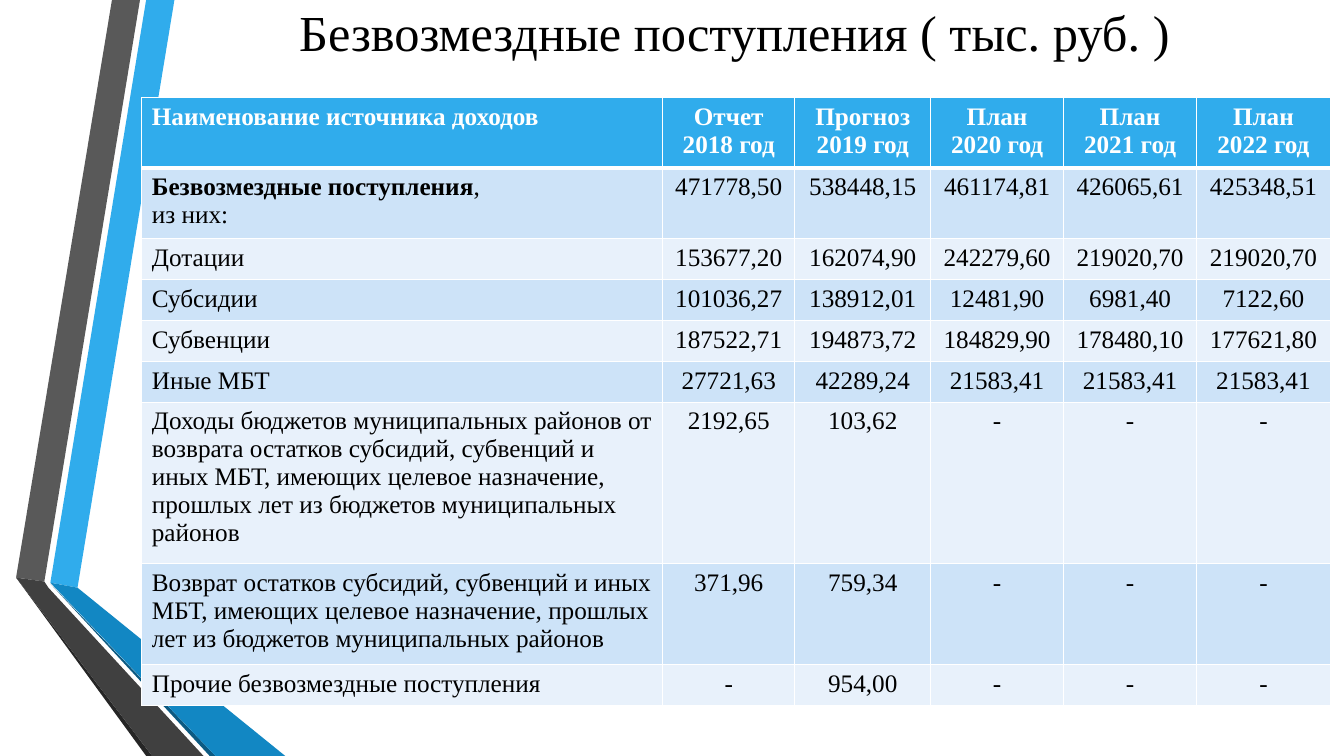
from lxml.etree import SubElement
from pptx import Presentation
from pptx.dml.color import RGBColor
from pptx.enum.text import MSO_ANCHOR as Anchor, PP_ALIGN as Align
from pptx.oxml.ns import qn
from pptx.util import Pt

FONT = "Times New Roman"
BLACK = RGBColor(0x00, 0x00, 0x00)
WHITE = RGBColor(0xFF, 0xFF, 0xFF)
BLUE = RGBColor(0x30, 0xAC, 0xEC)
MID_BLUE = RGBColor(0x12, 0x87, 0xC3)
DEEP_BLUE = RGBColor(0x0C, 0x5A, 0x82)
GREY = RGBColor(0x59, 0x59, 0x59)
DARK_GREY = RGBColor(0x40, 0x40, 0x40)
DEEP_GREY = RGBColor(0x26, 0x26, 0x26)
ROW_ODD = RGBColor(0xCD, 0xE3, 0xF8)
ROW_EVEN = RGBColor(0xE8, 0xF1, 0xFB)

# Ribbon facets on the left, from back to front
RIBBON = [
    (BLUE, [(36, 416.2), (55.4, 419.8), (124.6, 0), (104.4, 0)]),
    (GREY, [(100, 0), (80, 0), (11.5, 412.6), (31.7, 415.4)]),
    (DEEP_GREY, [(11.5, 412.6), (104.4, 540), (108.7, 540)]),
    (DEEP_BLUE, [(36, 416.9), (149.8, 540), (154, 540)]),
    (MID_BLUE, [(36, 416.2), (154, 540), (203.8, 540), (55.4, 419.8)]),
    (DARK_GREY, [(145.4, 540), (34.6, 419.8), (31.7, 415.4), (11.5, 412.6),
                 (108.7, 540)]),
]

COLUMN_WIDTHS = [372, 94.5, 97, 95, 95, 95.5]
ROW_HEIGHT = 29.2
HEADER = ["Наименование источника доходов", "Отчет 2018 год", "Прогноз 2019 год",
          "План 2020 год", "План 2021 год", "План 2022 год"]
TOTAL = "Безвозмездные поступления"
INCOME = [
    [TOTAL, "471778,50", "538448,15", "461174,81", "426065,61", "425348,51"],
    ["Дотации", "153677,20", "162074,90", "242279,60", "219020,70", "219020,70"],
    ["Субсидии", "101036,27", "138912,01", "12481,90", "6981,40", "7122,60"],
    ["Субвенции", "187522,71", "194873,72", "184829,90", "178480,10", "177621,80"],
    ["Иные МБТ", "27721,63", "42289,24", "21583,41", "21583,41", "21583,41"],
    ["Доходы бюджетов муниципальных районов от возврата остатков субсидий, "
     "субвенций и иных МБТ, имеющих целевое назначение, прошлых лет из бюджетов "
     "муниципальных районов", "2192,65", "103,62", "-", "-", "-"],
    ["Возврат остатков субсидий, субвенций и иных МБТ, имеющих целевое назначение, "
     "прошлых лет из бюджетов муниципальных районов",
     "371,96", "759,34", "-", "-", "-"],
    ["Прочие безвозмездные поступления", "-", "954,00", "-", "-", "-"],
]


def write(paragraph, text, size=18, color=BLACK, bold=False, align=Align.LEFT):
    paragraph.alignment = align
    run = paragraph.add_run()
    run.text = text
    run.font.name = FONT
    run.font.size = Pt(size)
    run.font.bold = bold
    run.font.color.rgb = color


def add_facet(slide, color, corners):
    start, *others = [(Pt(x), Pt(y)) for x, y in corners]
    outline = slide.shapes.build_freeform(*start)
    outline.add_line_segments(others, close=True)
    facet = outline.convert_to_shape()
    facet.shadow.inherit = False
    facet.fill.solid()
    facet.fill.fore_color.rgb = color
    facet.line.fill.background()


def add_title(slide, text):
    title = slide.shapes.add_textbox(Pt(130.3), Pt(5.8), Pt(789), Pt(33.8)).text_frame
    title.word_wrap = True
    title.vertical_anchor = Anchor.MIDDLE
    write(title.paragraphs[0], text, size=36, align=Align.CENTER)


def style_cell(cell, color, **borders):
    properties = cell._tc.get_or_add_tcPr()
    for side in "LRTB":
        line = SubElement(properties, qn(f"a:ln{side}"), w=str(Pt(borders.get(side, 1))))
        SubElement(SubElement(line, qn("a:solidFill")), qn("a:srgbClr"), val=str(WHITE))
    cell.fill.solid()
    cell.fill.fore_color.rgb = color


def add_income_table(slide):
    rows = [HEADER, *INCOME]
    table = slide.shapes.add_table(
        len(rows), len(HEADER), Pt(101.3), Pt(69.8),
        Pt(sum(COLUMN_WIDTHS)), Pt(ROW_HEIGHT * len(rows))).table
    for column, width in zip(table.columns, COLUMN_WIDTHS):
        column.width = Pt(width)
    for r, values in enumerate(rows):
        table.rows[r].height = Pt(ROW_HEIGHT)
        for c, value in enumerate(values):
            cell = table.cell(r, c)
            if r == 0:
                style_cell(cell, BLUE, B=3)
            else:
                style_cell(cell, ROW_ODD if r % 2 else ROW_EVEN, T=3 if r == 1 else 1)
            write(cell.text_frame.paragraphs[0], value,
                  color=BLACK if r else WHITE, bold=r == 0 or value == TOTAL,
                  align=Align.CENTER if c else Align.LEFT)

    # The total's label goes on after its bold words
    total = table.cell(1, 0).text_frame
    write(total.paragraphs[0], ",")
    write(total.add_paragraph(), "из них:")


def main():
    deck = Presentation()
    deck.slide_width, deck.slide_height = Pt(960), Pt(540)
    slide = deck.slides.add_slide(deck.slide_layouts[6])
    for color, corners in RIBBON:
        add_facet(slide, color, corners)
    add_title(slide, "Безвозмездные поступления ( тыс. руб. )")
    add_income_table(slide)
    deck.save("out.pptx")


if __name__ == "__main__":
    main()
